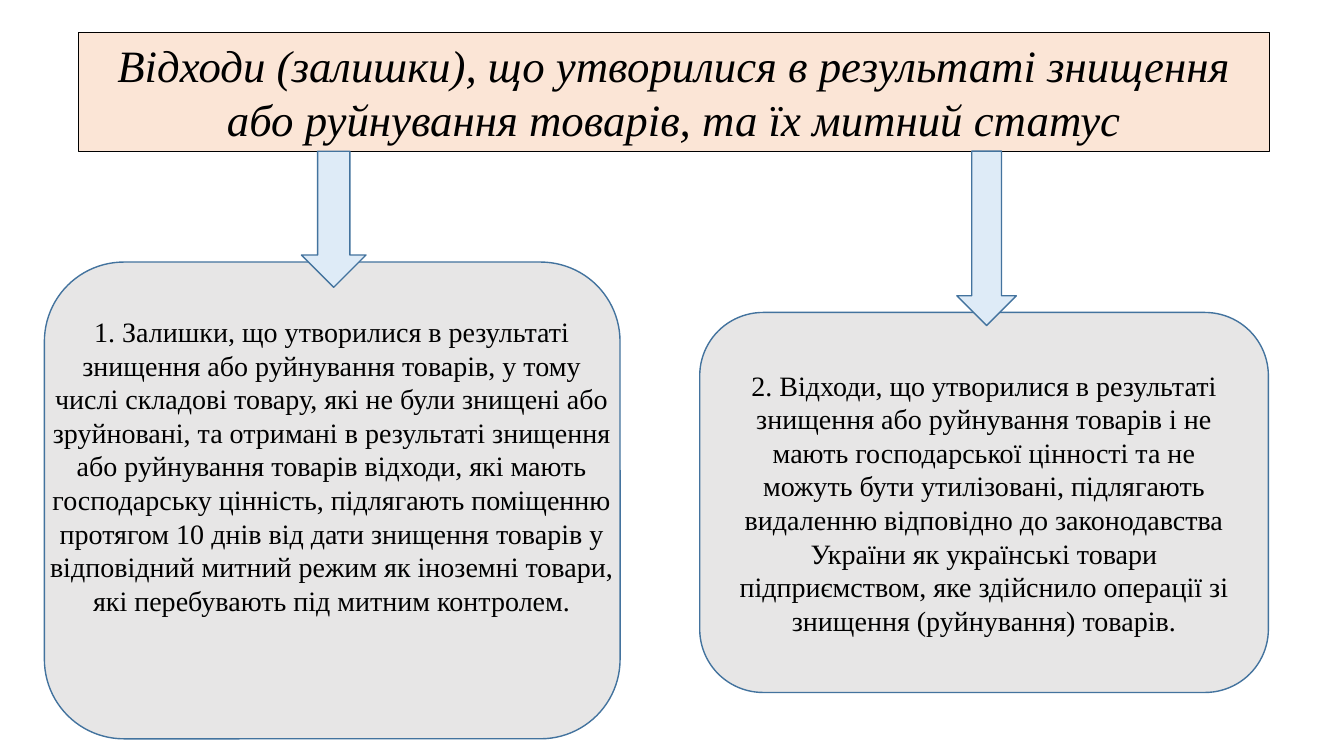
from pptx import Presentation
from pptx.dml.color import RGBColor
from pptx.enum.shapes import MSO_SHAPE
from pptx.enum.text import MSO_ANCHOR, MSO_AUTO_SIZE, PP_ALIGN
from pptx.util import Inches, Pt

COLORS = {
    "title": "FBE5D6",
    "panel": "E7E6E6",
    "arrow": "DEEBF7",
    "outline": "43739E",
    "text": "000000",
}
TITLE = "Відходи (залишки), що утворилися в результаті знищення або руйнування товарів, та їх митний статус"
REMAINS = (
    "1. Залишки, що утворилися в результаті знищення або руйнування товарів, "
    "у тому числі складові товару, які не були знищені або зруйновані, та отримані "
    "в результаті знищення або руйнування товарів відходи, які мають господарську "
    "цінність, підлягають поміщенню протягом 10 днів від дати знищення товарів у "
    "відповідний митний режим як іноземні товари, які перебувають під митним контролем."
)
WASTE = (
    "2. Відходи, що утворилися в результаті знищення або руйнування товарів і не мають "
    "господарської цінності та не можуть бути утилізовані, підлягають видаленню "
    "відповідно до законодавства України як українські товари підприємством, яке "
    "здійснило операції зі знищення (руйнування) товарів."
)


class SlideBuilder:
    def __init__(self, slide, font="Times New Roman"):
        self.slide = slide
        self.font = font

    def color(self, name):
        return RGBColor.from_string(COLORS[name])

    def shape(self, kind, box, fill, outline="outline", weight=1, parent=None):
        shapes = (parent or self.slide).shapes
        shape = shapes.add_shape(kind, *map(Inches, box))
        shape.shadow.inherit = False
        shape.fill.solid()
        shape.fill.fore_color.rgb = self.color(fill)
        shape.line.color.rgb = self.color(outline)
        shape.line.width = Pt(weight)
        return shape

    def panel(self, box, parent=None):
        return self.shape(MSO_SHAPE.FLOWCHART_ALTERNATE_PROCESS, box, "panel", parent=parent)

    def arrow(self, box):
        return self.shape(MSO_SHAPE.DOWN_ARROW, box, "arrow")

    def textbox(self, box, parent=None):
        return (parent or self.slide).shapes.add_textbox(*map(Inches, box))

    def add_text(self, shape, text, size, italic=None, anchor=MSO_ANCHOR.MIDDLE, grow=False):
        """Put one centred paragraph into the shape."""
        frame = shape.text_frame
        frame.word_wrap = True
        frame.vertical_anchor = anchor
        if grow:
            frame.auto_size = MSO_AUTO_SIZE.SHAPE_TO_FIT_TEXT
        paragraph = frame.paragraphs[0]
        paragraph.alignment = PP_ALIGN.CENTER
        run = paragraph.add_run()
        run.text = text
        run.font.name = self.font
        run.font.size = Pt(size)
        run.font.italic = italic
        run.font.color.rgb = self.color("text")


def main():
    deck = Presentation()
    deck.slide_width, deck.slide_height = Inches(13.33), Inches(7.5)
    builder = SlideBuilder(deck.slides.add_slide(deck.slide_layouts[6]))

    title = builder.shape(MSO_SHAPE.RECTANGLE, (0.78, 0.32, 11.81, 1.18), "title", "text", 0.75)
    builder.add_text(title, TITLE, 32, italic=True, grow=True)

    waste = builder.panel((6.94, 3.1, 5.64, 3.77))
    builder.add_text(waste, WASTE, 20)

    remains = builder.slide.shapes.add_group_shape()
    builder.panel((0.44, 2.6, 5.71, 4.73), parent=remains)
    remains_text = builder.textbox((0.39, 3.07, 5.8, 3.8), parent=remains)
    builder.add_text(remains_text, REMAINS, 20, anchor=MSO_ANCHOR.TOP, grow=True)

    for box in ((9.49, 1.5, 0.59, 1.73), (2.99, 1.5, 0.64, 1.35)):
        builder.arrow(box)

    deck.save("out.pptx")


if __name__ == "__main__":
    main()
